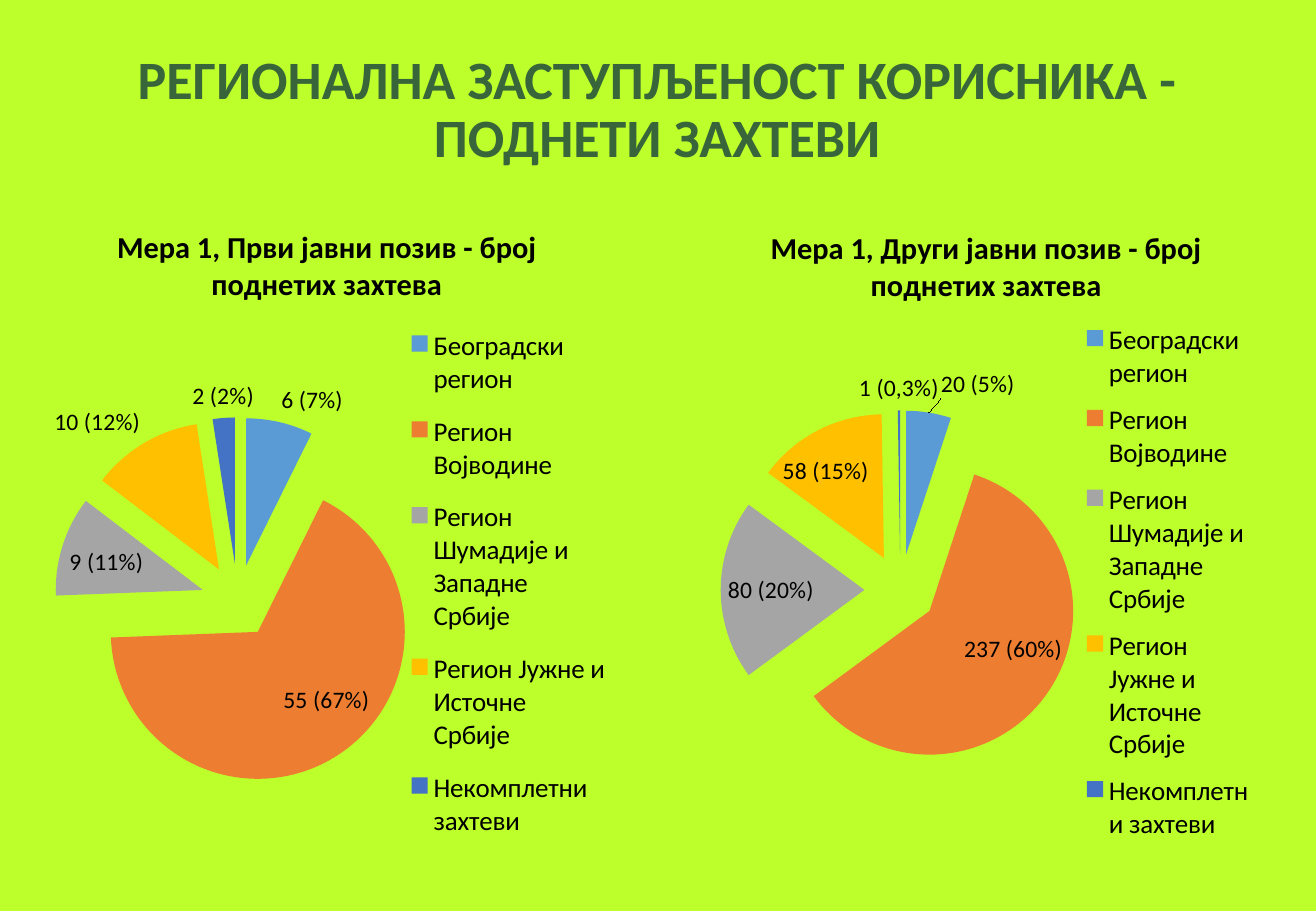
from lxml import etree
from pptx import Presentation
from pptx.chart.data import CategoryChartData
from pptx.dml.color import RGBColor
from pptx.enum.chart import XL_CHART_TYPE, XL_LABEL_POSITION, XL_LEGEND_POSITION
from pptx.enum.text import MSO_ANCHOR, PP_ALIGN
from pptx.oxml.ns import qn
from pptx.util import Inches, Pt

LIME = RGBColor(0xBC, 0xFF, 0x2B)
GREEN = RGBColor(0x38, 0x65, 0x39)
BLACK = RGBColor(0, 0, 0)
REGIONS = {
    "Београдски регион": RGBColor(0x5B, 0x9B, 0xD5),
    "Регион Војводине": RGBColor(0xED, 0x7D, 0x31),
    "Регион Шумадије и Западне Србије": RGBColor(0xA5, 0xA5, 0xA5),
    "Регион Јужне и Источне Србије": RGBColor(0xFF, 0xC0, 0x00),
    "Некомплетни захтеви": RGBColor(0x44, 0x72, 0xC4),
}
FONT = "Calibri"
OUT = XL_LABEL_POSITION.OUTSIDE_END
IN = XL_LABEL_POSITION.INSIDE_END


def set_font(font, size, color=BLACK, bold=False):
    font.name, font.size, font.bold = FONT, Pt(size), bold
    font.color.rgb = color


def make_layout(**values):
    """Return a c:layout element with the given manual layout values."""
    layout = etree.Element(qn("c:layout"))
    manual = etree.SubElement(layout, qn("c:manualLayout"))
    for name, value in values.items():
        etree.SubElement(manual, qn(f"c:{name}")).set("val", str(value))
    return layout


def frame_layout(x, y, w, h, **target):
    return make_layout(**target, xMode="edge", yMode="edge", x=x, y=y, w=w, h=h)


def add_title(slide, text):
    box = slide.shapes.add_textbox(Inches(0.74), Inches(0.19), Inches(9.34), Inches(1.45))
    tf = box.text_frame
    tf.word_wrap = True
    tf.vertical_anchor = MSO_ANCHOR.MIDDLE
    p = tf.paragraphs[0]
    p.text = text
    p.alignment = PP_ALIGN.CENTER
    p.line_spacing = 0.9
    set_font(p.font, 32, GREEN, True)


def place_plot(chart, bounds):
    plot_area = chart.plots[0]._element.getparent()
    for layout in plot_area.findall(qn("c:layout")):
        plot_area.remove(layout)
    plot_area.insert(0, frame_layout(*bounds, layoutTarget="inner"))


def add_legend(chart, left, width):
    chart.has_legend = True
    legend = chart.legend
    legend.position = XL_LEGEND_POSITION.RIGHT
    legend.include_in_layout = False
    set_font(legend.font, 16)
    layout = frame_layout(left, 0.16, width, 0.8)
    legend._element.find(qn("c:legendPos")).addnext(layout)


def explode(series, percent):
    explosion = etree.Element(qn("c:explosion"))
    explosion.set("val", str(percent))
    series._element.find(qn("c:tx")).addnext(explosion)


def label_point(point, text, position):
    label = point.data_label
    p = label.text_frame.paragraphs[0]
    r = p.add_run()
    r.text = text
    set_font(r.font, 14)
    label.position = position


def nudge_labels(series, shifts):
    """Shift data labels, keyed by point, by fractions of the chart's size."""
    labels = series.data_labels._element.findall(qn("c:dLbl"))
    for i, (x, y) in shifts.items():
        labels[i].insert(1, make_layout(x=x, y=y))


def add_pie(slide, bounds, title, values, labels, positions, shifts, plot, legend):
    data = CategoryChartData()
    data.categories = list(REGIONS)
    data.add_series("Series 1", values)
    frame = slide.shapes.add_chart(XL_CHART_TYPE.PIE, *map(Inches, bounds), data)
    chart = frame.chart
    set_font(chart.font, 10)
    chart.has_title = True
    p = chart.chart_title.text_frame.paragraphs[0]
    r = p.add_run()
    r.text = title
    set_font(r.font, 18, bold=True)
    place_plot(chart, plot)
    add_legend(chart, *legend)

    chart.plots[0].vary_by_categories = True
    series = chart.plots[0].series[0]
    explode(series, 25)
    series.data_labels.show_value = True
    set_font(series.data_labels.font, 14)
    for i, (color, text, position) in enumerate(zip(REGIONS.values(), labels, positions)):
        point = series.points[i]
        point.format.fill.solid()
        point.format.fill.fore_color.rgb = color
        label_point(point, text, position)
    nudge_labels(series, shifts)


def main():
    prs = Presentation()
    prs.slide_width, prs.slide_height = Inches(10.83), Inches(7.5)
    s = prs.slides.add_slide(prs.slide_layouts[6])
    s.background.fill.solid()
    s.background.fill.fore_color.rgb = LIME

    add_title(s, "РЕГИОНАЛНА ЗАСТУПЉЕНОСТ КОРИСНИКА - ПОДНЕТИ ЗАХТЕВИ")
    add_pie(
        s, (0.25, 1.65, 4.88, 5.64),
        "Мера 1, Први јавни позив - број поднетих захтева",
        (6, 55, 9, 10, 2),
        ("6 (7%)", "55 (67%)", "9 (11%)", "10 (12%)", "2 (2%)"),
        (OUT, IN, IN, OUT, OUT),
        shifts={1: (0.06, -0.05)},
        plot=(0.04, 0.17, 0.62, 0.83), legend=(0.67, 0.34),
    )
    add_pie(
        s, (5.84, 1.66, 4.55, 5.61),
        "Мера 1, Други јавни позив - број поднетих захтева",
        (20, 237, 80, 58, 1),
        ("20 (5%)", "237 (60%)", "80 (20%)", "58 (15%)", "1 (0,3%)"),
        (OUT, IN, IN, IN, OUT),
        shifts={0: (0.02, -0.01), 1: (0.04, -0.04), 3: (-0.07, 0.03)},
        plot=(0.02, 0.14, 0.65, 0.86), legend=(0.69, 0.31),
    )
    prs.save("out.pptx")


if __name__ == "__main__":
    main()
